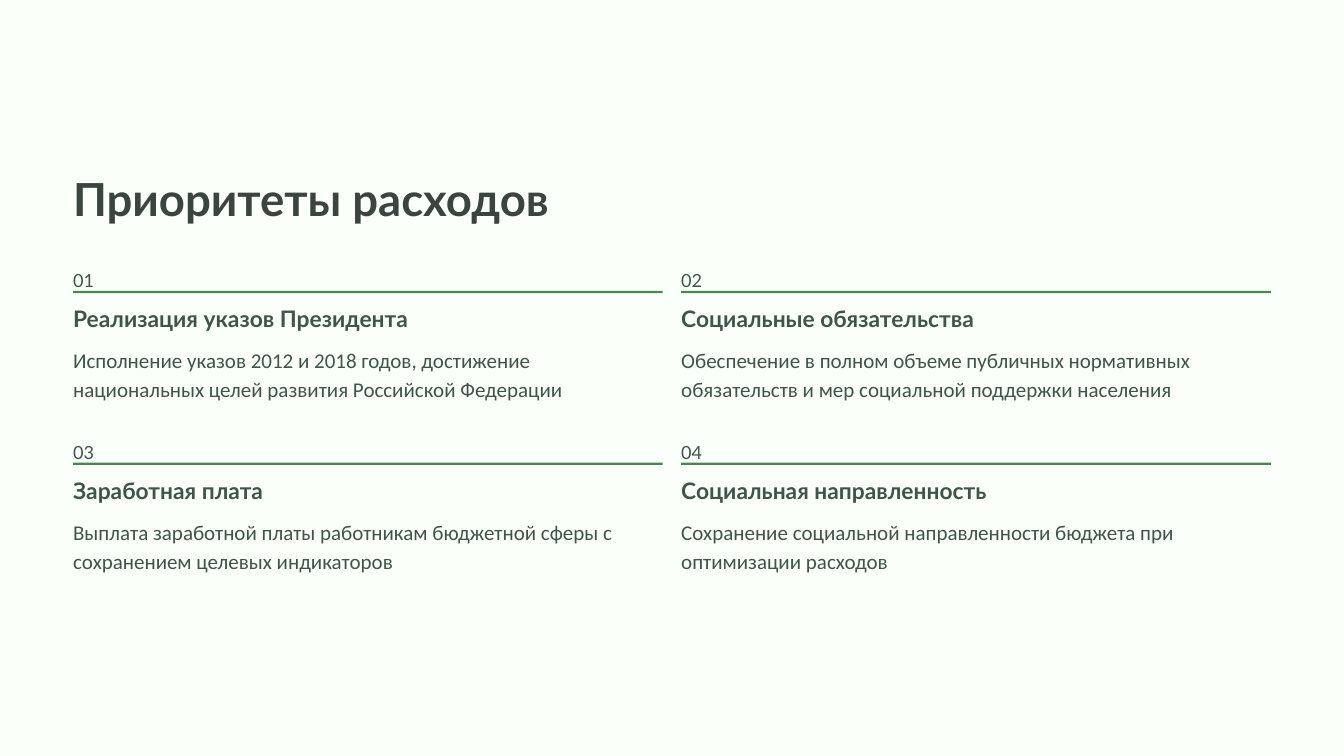
from pptx import Presentation
from pptx.dml.color import RGBColor
from pptx.enum.shapes import MSO_SHAPE as Shape
from pptx.util import Pt

COLORS = {"page": "FAFFFA", "title": "3B4540", "text": "405449", "rule": "438951"}
PAGE_WIDTH, PAGE_HEIGHT = 1152, 648
LEFT, TOP = 62.64, 224.64
COLUMN_STEP, ROW_STEP = 521.28, 147.24
COLUMN_WIDTH = 505.44

PRIORITIES = [
    ("Реализация указов Президента", 325.44,
     "Исполнение указов 2012 и 2018 годов, достижение "
     "национальных целей развития Российской Федерации"),
    ("Социальные обязательства", 283.68,
     "Обеспечение в полном объеме публичных нормативных "
     "обязательств и мер социальной поддержки населения"),
    ("Заработная плата", 195.12,
     "Выплата заработной платы работникам бюджетной сферы с "
     "сохранением целевых индикаторов"),
    ("Социальная направленность", 297.36,
     "Сохранение социальной направленности бюджета при "
     "оптимизации расходов"),
]


class PrioritySlide:
    def __init__(self, slide):
        self.slide = slide

    def block(self, left, top, width, height, color):
        """Add a rectangle of one colour without an outline."""
        block = self.slide.shapes.add_shape(
            Shape.RECTANGLE, Pt(left), Pt(top), Pt(width), Pt(height))
        block.shadow.inherit = False
        block.fill.solid()
        block.fill.fore_color.rgb = RGBColor.from_string(COLORS[color])
        block.line.fill.background()

    def text(self, words, left, top, width, height, size, spacing,
             font="Lato", color="text", bold=False, wrap=False):
        box = self.slide.shapes.add_textbox(Pt(left), Pt(top), Pt(width), Pt(height))
        frame = box.text_frame
        frame.margin_left = frame.margin_right = 0
        frame.margin_top = frame.margin_bottom = 0
        frame.word_wrap = wrap
        paragraph = frame.paragraphs[0]
        paragraph.text = words
        paragraph.line_spacing = Pt(spacing)
        paragraph.font.name = font
        paragraph.font.size = Pt(size)
        paragraph.font.bold = bold
        paragraph.font.color.rgb = RGBColor.from_string(COLORS[color])

    def priority(self, number, heading, heading_width, details, left, top):
        self.text(f"{number:02}", left, top, 20, 19.44, 15.5, 25)
        self.block(left, top + 24.6, COLUMN_WIDTH, 2, "rule")
        self.text(heading, left, top + 36.2, heading_width, 24.48, 19.5, 24, bold=True)
        self.text(details, left, top + 70, COLUMN_WIDTH, 49.68, 18, 25,
                  font="Calibri", wrap=True)


def main():
    deck = Presentation()
    deck.slide_width, deck.slide_height = Pt(PAGE_WIDTH), Pt(PAGE_HEIGHT)
    page = PrioritySlide(deck.slides.add_slide(deck.slide_layouts[6]))
    page.block(0, 0, PAGE_WIDTH, PAGE_HEIGHT, "page")
    page.text("Приоритеты расходов", LEFT, 144.72, 456.48, 48.96, 39, 48.5,
              color="title", bold=True)
    for index, (heading, heading_width, details) in enumerate(PRIORITIES):
        row, column = divmod(index, 2)
        page.priority(index + 1, heading, heading_width, details,
                      LEFT + column * COLUMN_STEP, TOP + row * ROW_STEP)
    deck.save("out.pptx")


if __name__ == "__main__":
    main()
